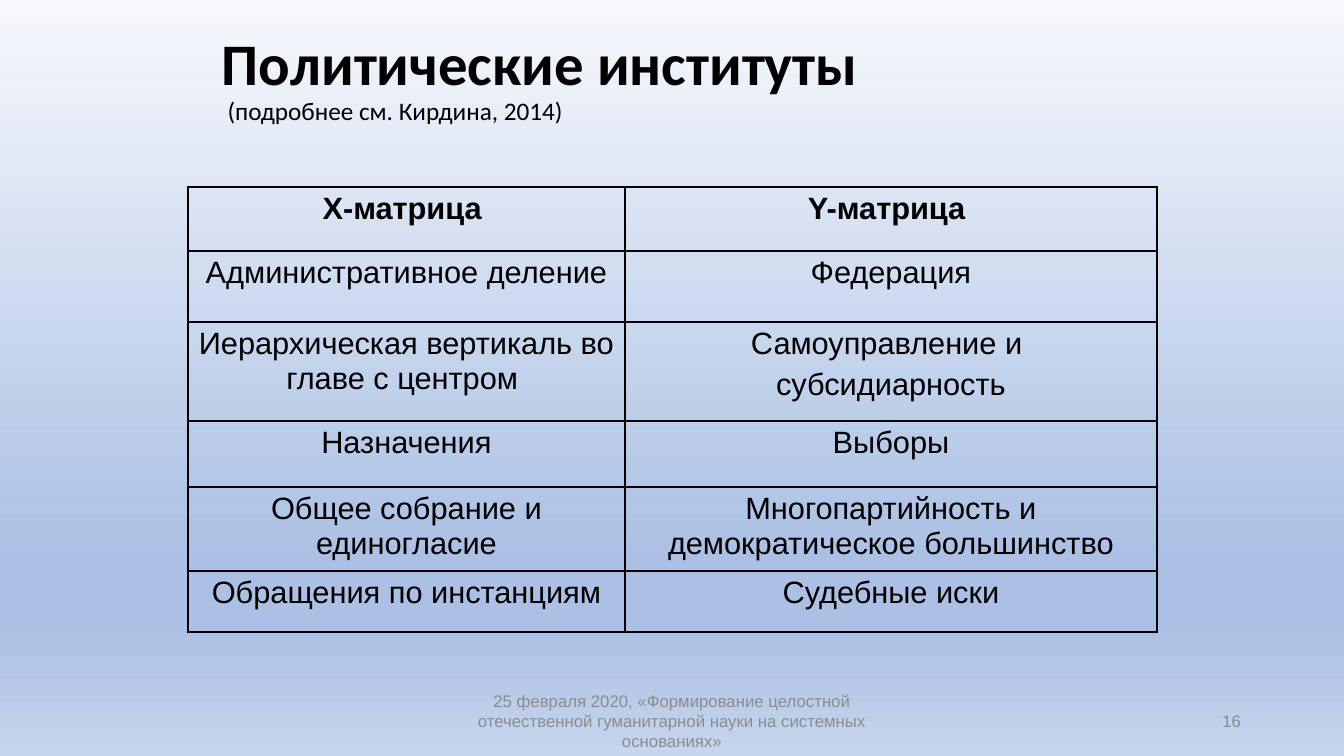
import dataclasses

import pptx
import pptx.dml.color
import pptx.enum.text
import pptx.oxml
import pptx.oxml.ns
import pptx.util

ALIGN = pptx.enum.text.PP_ALIGN
ANCHOR = pptx.enum.text.MSO_ANCHOR
qn = pptx.oxml.ns.qn
NS = pptx.oxml.ns.nsdecls("a")


@dataclasses.dataclass(frozen=True)
class Theme:
    ink: str = "000000"
    gray: str = "8C8C8C"
    sky: tuple = ((0, "F6F8FC"), (74, "ABC0E4"), (83, "ABC0E4"), (100, "C7D5ED"))
    head: str = "Calibri"
    body: str = "Arial"
    title: int = 42
    sub: int = 18
    cell: int = 22
    foot: int = 12
    thick: float = 2.25
    thin: float = 1


def px(num):
    return pptx.util.Emu(round(num * 914400 / 100.8))


def write(para, text, *, font, size, color, bold=False, align=ALIGN.LEFT):
    para.alignment = align
    run = para.add_run()
    run.text = text
    run.font.name = font
    run.font.size = pptx.util.Pt(size)
    run.font.bold = bold
    run.font.color.rgb = pptx.dml.color.RGBColor.from_string(color)


class Deck:
    def __init__(self, theme):
        self.theme = theme
        self.show = pptx.Presentation()
        self.show.slide_width, self.show.slide_height = px(1344), px(756)
        self.slide = self.show.slides.add_slide(self.show.slide_layouts[6])

    def sky(self):
        fill = self.slide.background.fill
        fill.gradient()
        fill.gradient_angle = 270
        stops = next(self.slide.element.iter(qn("a:gsLst")))
        for old in list(stops):
            stops.remove(old)
        for pos, color in self.theme.sky:
            stops.append(pptx.oxml.parse_xml(
                f'<a:gs {NS} pos="{pos * 1000}"><a:srgbClr val="{color}"/></a:gs>'))

    def box(self, left, top, width, height):
        shape = self.slide.shapes.add_textbox(px(left), px(top), px(width), px(height))
        frame = shape.text_frame
        frame.word_wrap = True
        frame.vertical_anchor = ANCHOR.MIDDLE
        return frame.paragraphs[0]

    def title(self, text, note, *area):
        t = self.theme
        para = self.box(*area)
        para.line_spacing = 0.9
        write(para, text, font=t.head, size=t.title, color=t.ink, bold=True)
        para.add_line_break()
        write(para, note, font=t.head, size=t.sub, color=t.ink)

    def foot(self, text, align, *area):
        t = self.theme
        write(self.box(*area), text, font=t.body, size=t.foot, color=t.gray, align=align)

    def edge(self, cell, sides):
        props = cell._tc.get_or_add_tcPr()
        for i, (side, outer) in enumerate(sides.items()):
            width = pptx.util.Pt(self.theme.thick if outer else self.theme.thin)
            props.insert(i, pptx.oxml.parse_xml(
                f'<a:ln{side} {NS} w="{width}"><a:solidFill>'
                f'<a:srgbClr val="{self.theme.ink}"/></a:solidFill></a:ln{side}>'))

    def table(self, left, top, cols, rows, data):
        t = self.theme
        grid = self.slide.shapes.add_table(
            len(rows), len(cols), px(left), px(top), px(sum(cols)), px(sum(rows))).table
        grid.first_row = grid.horz_banding = False
        for col, width in zip(grid.columns, cols):
            col.width = px(width)
        for row, height in zip(grid.rows, rows):
            row.height = px(height)
        for r, line in enumerate(data):
            for c, text in enumerate(line):
                cell = grid.cell(r, c)
                cell.fill.background()
                self.edge(cell, {"L": c == 0, "R": c == len(cols) - 1,
                                 "T": r == 0, "B": r == len(rows) - 1})
                frame = cell.text_frame
                for i, part in enumerate(text.split("\n")):
                    para = frame.add_paragraph() if i else frame.paragraphs[0]
                    para.space_before = pptx.util.Pt(t.cell * 0.2)
                    write(para, part, font=t.body, size=t.cell, color=t.ink,
                          bold=r == 0, align=ALIGN.CENTER)


def main():
    deck = Deck(Theme())
    deck.sky()

    # Heading
    deck.title("Политические институты", " (подробнее см. Кирдина, 2014)",
               212, 29, 924, 103)

    # Comparison of the two matrices
    deck.table(188, 187, (437, 532), (64, 71, 99, 66, 79, 61), (
        ("Х-матрица ", "Y-матрица "),
        ("Административное деление", "Федерация"),
        ("Иерархическая вертикаль во главе с центром ",
         "Самоуправление и \nсубсидиарность"),
        ("Назначения", "Выборы"),
        ("Общее собрание и единогласие",
         "Многопартийность и демократическое большинство"),
        ("Обращения по инстанциям", "Судебные иски"),
    ))

    # Footer and slide number
    deck.foot("25 февраля 2020, «Формирование целостной отечественной "
              "гуманитарной науки на системных основаниях»",
              ALIGN.CENTER, 445, 701, 454, 40)
    deck.foot("16", ALIGN.RIGHT, 949, 701, 302, 40)

    deck.show.save("out.pptx")


if __name__ == "__main__":
    main()
